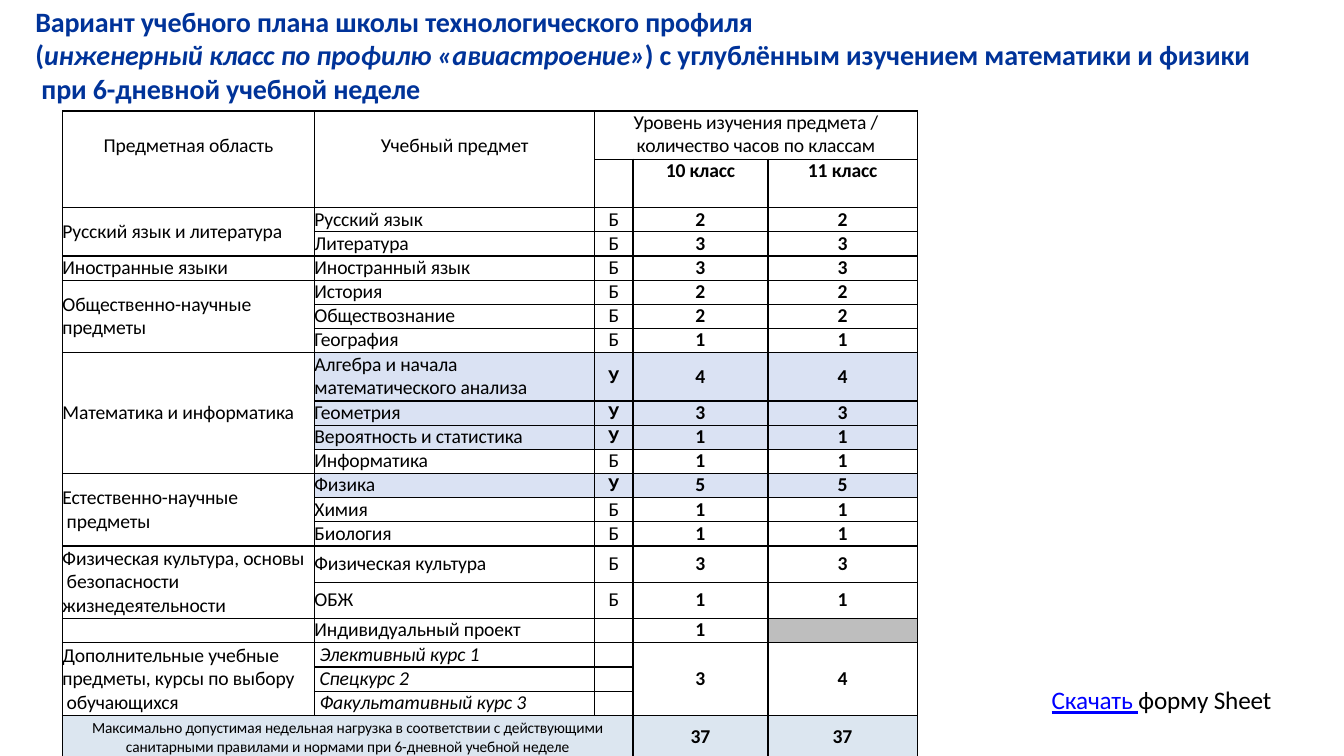
from lxml.etree import SubElement
from pptx import Presentation
from pptx.dml.color import RGBColor
from pptx.enum.text import MSO_ANCHOR, MSO_AUTO_SIZE, PP_ALIGN
from pptx.oxml.ns import qn
from pptx.util import Inches, Pt

BLACK, NAVY, LINK_BLUE = "000000", "003399", "0000FF"
ADVANCED_FILL, TOTAL_FILL, GREY = "DAE2F3", "DCE6F0", "BEBEBE"

COLUMN_WIDTHS = [18.75, 20.85, 2.85, 10.05, 11.1]
LINE = 3.2  # height of a one-line table row, in grid rows
ROW_LINES = [2, 2] + [1] * 6 + [2] + [1] * 6 + [1.5] * 2 + [1] * 4 + [1.85]

# Subject area, then its subjects: name, level, hours in grade 10 and grade 11
AREAS = [
    ("Русский язык и литература",
     [("Русский язык", "Б", "2", "2"), ("Литература", "Б", "3", "3")]),
    ("Иностранные языки", [("Иностранный язык", "Б", "3", "3")]),
    ("Общественно-научные\nпредметы",
     [("История", "Б", "2", "2"), ("Обществознание", "Б", "2", "2"),
      ("География", "Б", "1", "1")]),
    ("Математика и информатика",
     [("Алгебра и начала\nматематического анализа", "У", "4", "4"),
      ("Геометрия", "У", "3", "3"), ("Вероятность и статистика", "У", "1", "1"),
      ("Информатика", "Б", "1", "1")]),
    ("Естественно-научные\v предметы",
     [("Физика", "У", "5", "5"), ("Химия", "Б", "1", "1"),
      ("Биология", "Б", "1", "1")]),
    ("Физическая культура, основы\v безопасности\nжизнедеятельности",
     [("Физическая культура", "Б", "3", "3"), ("ОБЖ", "Б", "1", "1")]),
    ("", [("Индивидуальный проект", "", "1", "")]),
]
AREA_OF_CHOICE = "Дополнительные учебные\nпредметы, курсы по выбору\v обучающихся"
COURSES = ["Элективный курс 1", "Спецкурс 2", "Факультативный курс 3"]
TOTAL = ("Максимально допустимая недельная нагрузка в соответствии с действующими\v"
         "санитарными правилами и нормами при 6-дневной учебной неделе")


def color(code):
    return RGBColor.from_string(code)


class Page:
    """A title-only slide on a grid of 100 columns by 100 rows."""

    font = "Calibri"
    tracking = "-10"

    def __init__(self, deck):
        self.column = deck.slide_width / 100
        self.row = deck.slide_height / 100
        self.slide = deck.slides.add_slide(deck.slide_layouts[5])

    def columns(self, count):
        return round(count * self.column)

    def rows(self, count):
        return round(count * self.row)

    def area(self, left, top, width, height):
        return (self.columns(left), self.rows(top),
                self.columns(width), self.rows(height))

    def style(self, para, size, code=BLACK, bold=False, italic=False,
              align=PP_ALIGN.LEFT):
        para.alignment = align
        font = para.font
        font.name, font.size, font.bold, font.italic = self.font, Pt(size), bold, italic
        font.color.rgb = color(code)
        for span in para.runs:
            span._r.get_or_add_rPr().set("spc", self.tracking)

    def frame(self, box, top_margin):
        frame = box.text_frame
        frame.word_wrap = True
        frame.auto_size = MSO_AUTO_SIZE.NONE
        frame.vertical_anchor = MSO_ANCHOR.TOP
        frame.margin_left = frame.margin_right = frame.margin_bottom = 0
        frame.margin_top = self.rows(top_margin)
        return frame

    def title(self, area, first_line, opening, emphasis, closing, last_line):
        box = self.slide.shapes.title
        box.left, box.top, box.width, box.height = self.area(*area)
        frame = self.frame(box, 0.3)
        frame.text = first_line
        para = frame.add_paragraph()
        para.add_run().text = opening
        span = para.add_run()
        span.text = emphasis
        span.font.italic = True
        para.add_run().text = closing
        para.add_line_break()
        para.add_run().text = last_line
        for para in frame.paragraphs:
            para.space_before = Pt(0)
            self.style(para, 20, NAVY, bold=True)

    def caption(self, area, marked, plain):
        """Add a line of text whose first words look like a link."""
        frame = self.frame(self.slide.shapes.add_textbox(*self.area(*area)), 0.3)
        para = frame.paragraphs[0]
        span = para.add_run()
        span.text = marked
        span.font.underline = True
        span.font.color.rgb = color(LINK_BLUE)
        para.add_run().text = plain
        self.style(para, 18)

    def table(self, left, top, widths, heights):
        area = self.area(left, top, sum(widths), sum(heights))
        table = self.slide.shapes.add_table(len(heights), len(widths), *area).table
        table.first_row = table.horz_banding = False
        for column, width in zip(table.columns, widths):
            column.width = self.columns(width)
        for row, height in zip(table.rows, heights):
            row.height = self.rows(height)
        for cell in table.iter_cells():
            self.borders(cell)
            self.cell(cell, "")
        return table

    def borders(self, cell):
        for side in ("a:lnL", "a:lnR", "a:lnT", "a:lnB"):
            line = SubElement(cell._tc.get_or_add_tcPr(), qn(side), w=str(Pt(1)))
            SubElement(SubElement(line, qn("a:solidFill")), qn("a:srgbClr"), val=BLACK)

    def cell(self, cell, text, fill=None, size=14, spacing=16.4, indent=0,
             top=None, **style):
        """Fill a cell; its text is centred vertically unless top is given."""
        cell.margin_left = self.columns(indent)
        cell.margin_right = cell.margin_bottom = 0
        cell.margin_top = self.rows(top or 0)
        cell.vertical_anchor = MSO_ANCHOR.MIDDLE if top is None else MSO_ANCHOR.TOP
        cell.text_frame.text = text
        for para in cell.text_frame.paragraphs:
            para.line_spacing = Pt(spacing)
            self.style(para, size, **style)
        if fill:
            cell.fill.solid()
            cell.fill.fore_color.rgb = color(fill)
        else:
            cell.fill.background()


def merge_down(table, row, column, count):
    first = table.cell(row, column)
    if count > 1:
        first.merge(table.cell(row + count - 1, column))
    return first


def add_curriculum(page):
    table = page.table(4.65, 14.67, COLUMN_WIDTHS, [LINE * n for n in ROW_LINES])
    centred = {"align": PP_ALIGN.CENTER}
    hours = {"align": PP_ALIGN.CENTER, "bold": True}

    for column, heading in enumerate(["Предметная область", "Учебный предмет"]):
        page.cell(merge_down(table, 0, column, 2), heading, top=3.1, **centred)
    levels = table.cell(0, 2)
    levels.merge(table.cell(0, 4))
    page.cell(levels, "Уровень изучения предмета /\nколичество часов по классам", **centred)
    for column, grade in enumerate(["10 класс", "11 класс"], 3):
        page.cell(table.cell(1, column), grade, top=0, **hours)

    row = 2
    for area, subjects in AREAS:
        page.cell(merge_down(table, row, 0, len(subjects)), area, spacing=16.8)
        for subject, level, *counts in subjects:
            advanced = level == "У"
            fill = ADVANCED_FILL if advanced else None
            page.cell(table.cell(row, 1), subject, fill)
            page.cell(table.cell(row, 2), level, fill, bold=advanced, **centred)
            for column, count in enumerate(counts, 3):
                page.cell(table.cell(row, column), count, fill if count else GREY, **hours)
            row += 1

    page.cell(merge_down(table, row, 0, len(COURSES)), AREA_OF_CHOICE, spacing=16.8)
    for column, count in enumerate(["3", "4"], 3):
        page.cell(merge_down(table, row, column, len(COURSES)), count, **hours)
    for row, course in enumerate(COURSES, row):
        page.cell(table.cell(row, 1), course, indent=0.38, italic=True)

    total = table.cell(row + 1, 0)
    total.merge(table.cell(row + 1, 2))
    page.cell(total, TOTAL, TOTAL_FILL, size=11, spacing=13.4, **centred)
    for column in (3, 4):
        page.cell(table.cell(row + 1, column), "37", TOTAL_FILL, **hours)


def main():
    deck = Presentation()
    deck.slide_width, deck.slide_height = Inches(13.33), Inches(7.5)
    page = Page(deck)
    page.title((2.63, 0.27, 91.6, 13.73),
               "Вариант учебного плана школы технологического профиля",
               "(", "инженерный класс по профилю «авиастроение»",
               ") с углублённым изучением математики и физики",
               " при 6-дневной учебной неделе")
    add_curriculum(page)
    page.caption((78.25, 90.27, 16.6, 4.4), "Скачать ", "форму Sheet")
    deck.save("out.pptx")


if __name__ == "__main__":
    main()
